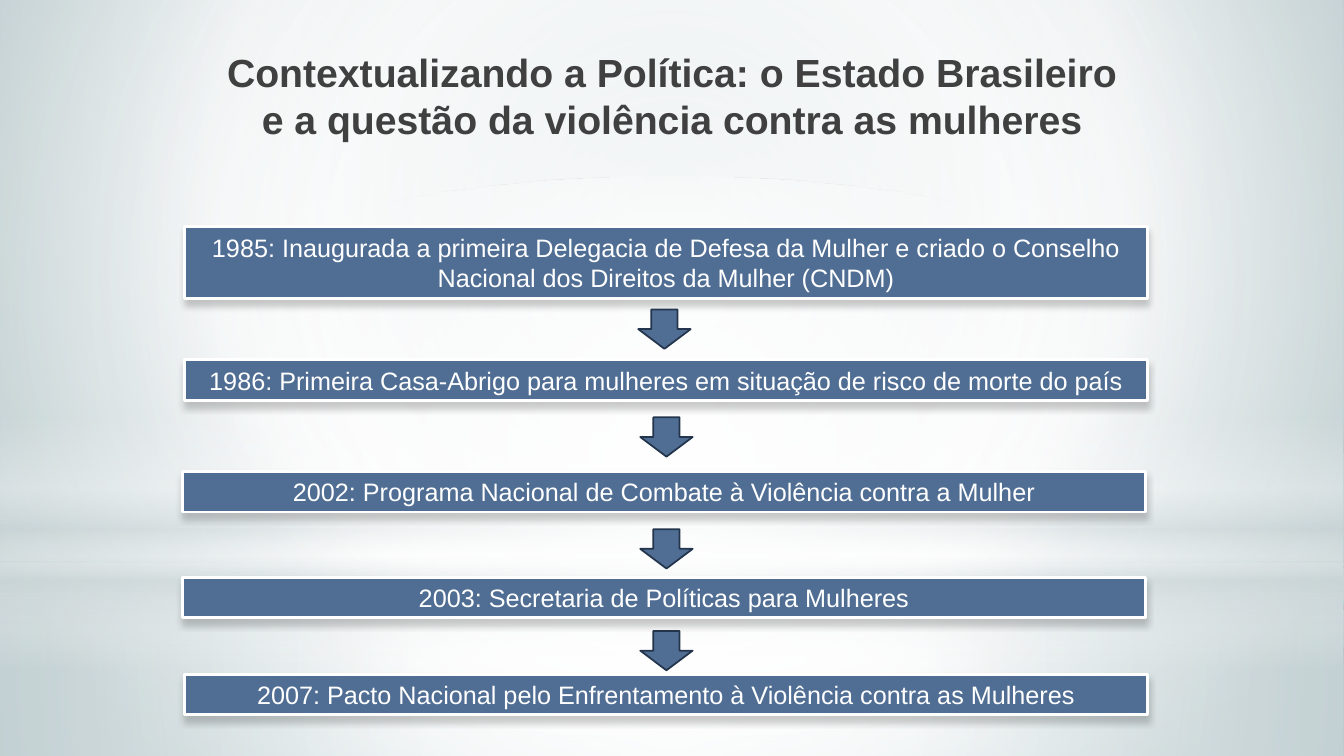
from dataclasses import dataclass

from pptx import Presentation
from pptx.dml.color import RGBColor
from pptx.enum.shapes import MSO_SHAPE
from pptx.enum.text import MSO_ANCHOR, PP_ALIGN
from pptx.oxml import parse_xml
from pptx.oxml.ns import nsdecls, qn
from pptx.util import Inches, Pt


@dataclass(frozen=True)
class Theme:
    """Colours, font and type sizes of the slide."""
    font: str = "Arial"
    title_size: int = 28
    bar_size: int = 18
    title: str = "404040"
    white: str = "FFFFFF"
    bar: str = "506E94"
    arrow_line: str = "23354C"
    mist: str = "CDD7D9"
    edge: str = "C2D0D3"
    deep: str = "9AB5BA"
    shadow: str = "000000"


T = Theme()
CENTRE = (50, 50, 50, 50)
TITLE = ("Contextualizando a Política: o Estado Brasileiro "
         "e a questão da violência contra as mulheres")
BARS = [
    ("1985: Inaugurada a primeira Delegacia de Defesa da Mulher e criado o Conselho "
     "Nacional dos Direitos da Mulher (CNDM)", 1.83, 2.25, 0.71),
    ("1986: Primeira Casa-Abrigo para mulheres em situação de risco de morte do país",
     1.83, 3.57, 0.4),
    ("2002: Programa Nacional de Combate à Violência contra a Mulher", 1.81, 4.68, 0.4),
    ("2003: Secretaria de Políticas para Mulheres", 1.81, 5.73, 0.4),
    ("2007: Pacto Nacional pelo Enfrentamento à Violência contra as Mulheres",
     1.83, 6.69, 0.4),
]
ARROWS = [(6.33, 3.07), (6.35, 4.14), (6.35, 5.25), (6.35, 6.26)]


def set_gradient(fill, parent, stops, to=None):
    """Fill with (position, colour, opacity) stops, radial towards `to` or else downwards."""
    fill.gradient()
    gs = "".join(
        f'<a:gs pos="{pos * 1000}"><a:srgbClr val="{color}">'
        f'<a:alpha val="{alpha * 1000}"/></a:srgbClr></a:gs>'
        for pos, color, alpha in stops)
    if to:
        sides = " ".join(f'{k}="{v * 1000}"' for k, v in zip("ltrb", to))
        shade = f'<a:path path="circle"><a:fillToRect {sides}/></a:path>'
    else:
        shade = '<a:lin ang="5400000" scaled="0"/>'
    old = next(parent.iter(qn("a:gradFill")))
    old.getparent().replace(old, parse_xml(
        f'<a:gradFill {nsdecls("a")} rotWithShape="1"><a:gsLst>{gs}</a:gsLst>{shade}</a:gradFill>'))


def add_shape(s, kind, box, fill=None, line=None, width=1.0):
    """Add a shadowless preset shape in a box given in inches."""
    sp = s.shapes.add_shape(kind, *map(Inches, box))
    sp.shadow.inherit = False
    if fill:
        sp.fill.solid()
        sp.fill.fore_color.rgb = RGBColor.from_string(fill)
    if line:
        sp.line.color.rgb = RGBColor.from_string(line)
        sp.line.width = Pt(width)
    else:
        sp.line.fill.background()
    return sp


def write(sp, text, size, color, bold=False, anchor=MSO_ANCHOR.MIDDLE, inset=0.1):
    """Write centred, wrapped text in a shape."""
    tf = sp.text_frame
    tf.word_wrap = True
    tf.vertical_anchor = anchor
    tf.margin_left = tf.margin_right = Inches(inset)
    p = tf.paragraphs[0]
    p.alignment = PP_ALIGN.CENTER
    r = p.add_run()
    r.text = text
    r.font.name = T.font
    r.font.size = Pt(size)
    r.font.bold = bold
    r.font.color.rgb = RGBColor.from_string(color)


def add_backdrop(s, width, height):
    """Paint the background and its translucent layers of light."""
    set_gradient(s.background.fill, s.element,
                 [(0, T.edge, 100), (60, T.white, 100), (100, T.deep, 100)], (20, 10, 20, 60))
    horizon = 5.58
    rect, oval = MSO_SHAPE.RECTANGLE, MSO_SHAPE.OVAL
    layers = [
        (rect, horizon, height - horizon,
         [(0, T.white, 91), (37, T.white, 76), (100, T.mist, 79)], CENTRE),
        (rect, 0, horizon,
         [(0, T.white, 89), (48, T.white, 62), (100, T.mist, 79)], CENTRE),
        (rect, 4.12, 2.5,
         [(0, T.white, 0), (29, T.white, 30), (45, T.mist, 40),
          (55, T.white, 26), (65, T.mist, 60), (100, T.white, 0)], None),
        (oval, 1.75, horizon, [(0, T.white, 100), (56, T.white, 0)], CENTRE),
    ]
    for kind, top, h, stops, to in layers:
        sp = add_shape(s, kind, (0, top, width, h))
        set_gradient(sp.fill, sp.element, stops, to)


def add_title(s, box):
    """Add the slide title."""
    tb = s.shapes.add_textbox(*map(Inches, box))
    write(tb, TITLE, T.title_size, T.title, bold=True, anchor=MSO_ANCHOR.TOP, inset=0.05)


def add_bar(s, text, box):
    """Add one milestone bar with a soft shadow below it."""
    sp = add_shape(s, MSO_SHAPE.RECTANGLE, box, T.bar, T.white, 2)
    sp.element.spPr.find(qn("a:effectLst")).append(parse_xml(
        f'<a:outerShdw {nsdecls("a")} blurRad="{Pt(5)}" dist="{Pt(4)}" dir="5400000" '
        f'rotWithShape="0"><a:srgbClr val="{T.shadow}"><a:alpha val="20000"/>'
        '</a:srgbClr></a:outerShdw>'))
    write(sp, text, T.bar_size, T.white)


def add_timeline(s, bar_width, arrow_width, arrow_height):
    """Add the milestones and the arrows between them."""
    for text, left, top, height in BARS:
        add_bar(s, text, (left, top, bar_width, height))
    for left, top in ARROWS:
        add_shape(s, MSO_SHAPE.DOWN_ARROW, (left, top, arrow_width, arrow_height),
                  T.bar, T.arrow_line, 1.25)


def main():
    """Build and save the slide."""
    width, height = 13.33, 7.5
    prs = Presentation()
    prs.slide_width, prs.slide_height = Inches(width), Inches(height)
    s = prs.slides.add_slide(prs.slide_layouts[6])
    add_backdrop(s, width, height)
    add_title(s, (2.13, 0.43, 9.07, 1.25))
    add_timeline(s, 9.55, 0.52, 0.39)
    prs.save("out.pptx")


if __name__ == "__main__":
    main()
